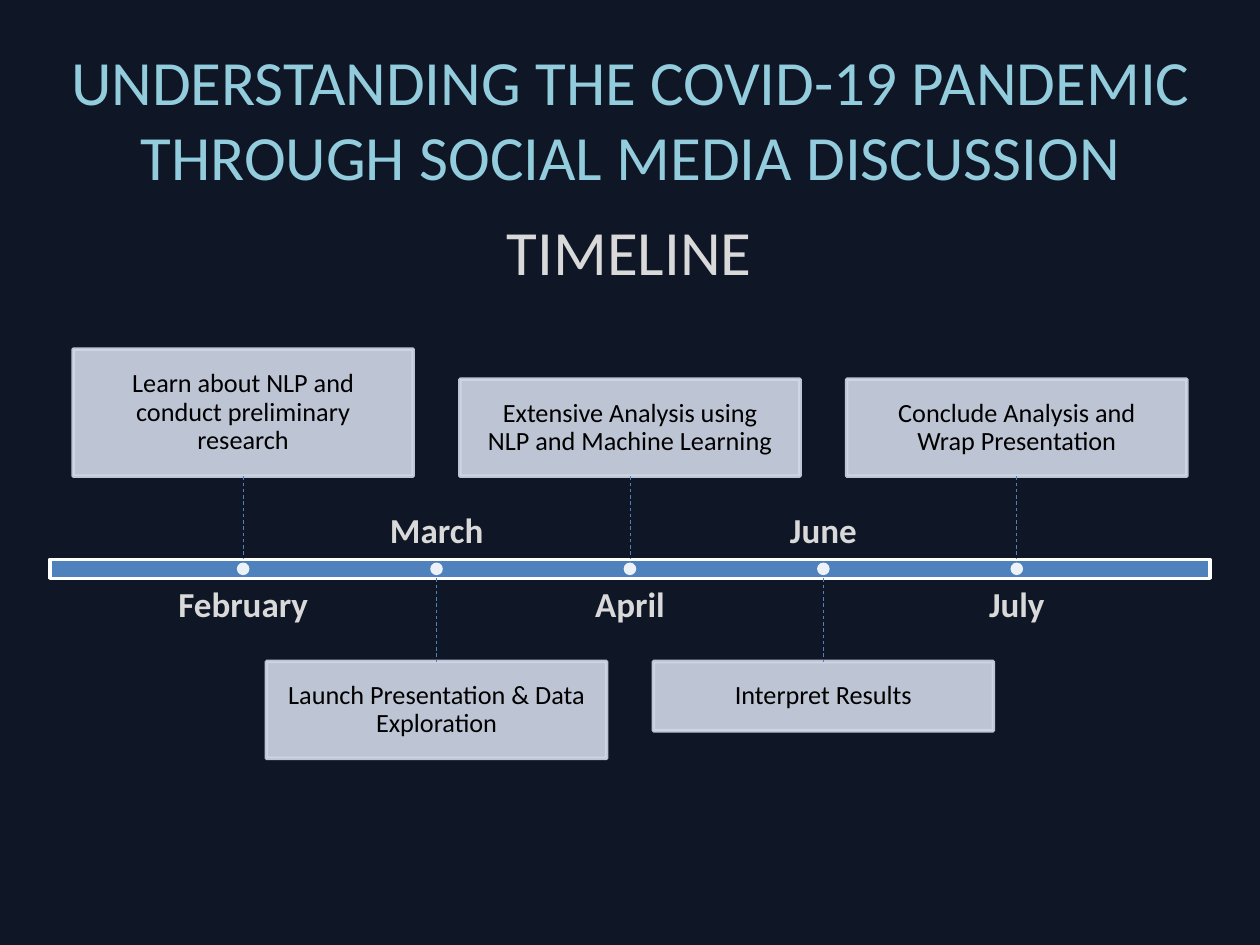
from lxml import etree
from pptx import Presentation
from pptx.dml.color import RGBColor
from pptx.enum import dml, shapes, text
from pptx.oxml.ns import qn
from pptx.util import Inches, Pt

HEADING = "UNDERSTANDING THE COVID-19 PANDEMIC THROUGH SOCIAL MEDIA DISCUSSION"
SUBHEADING = "TIMELINE"
MILESTONES = [
    ("February", "Learn about NLP and conduct preliminary research", 1.01),
    ("March", "Launch Presentation & Data Exploration", 0.77),
    ("April", "Extensive Analysis using NLP and Machine Learning", 0.77),
    ("June", "Interpret Results", 0.55),
    ("July", "Conclude Analysis and Wrap Presentation", 0.77),
]

THEME = {
    "font": "Calibri",
    "background": "0F1625", "heading": "93CDDD", "label": "D9D9D9",
    "accent": "4F81BD", "card": "D0D8E8", "card_text": "000000", "white": "FFFFFF",
    "heading_size": 36, "month_size": 20, "card_size": 15,
}

SLIDE_W, SLIDE_H = 10, 7.5
BAR_W, BAR_H, BAR_TOP = 9.21, 0.15, 4.44
BAR_LEFT = (SLIDE_W - BAR_W) / 2
BAR_BOTTOM = BAR_TOP + BAR_H
STEP = BAR_W / (len(MILESTONES) + 1)
CARD_W, CARD_INSET, STEM = 2.7, 0.16, 0.66
MONTH_W, MONTH_H, MONTH_GAP = 2.45, 0.44, 0.07
DOT = 0.1


def colour(name):
    return RGBColor.from_string(THEME[name])


def inches(*lengths):
    return [Inches(length) for length in lengths]


def make_translucent(fill_parent):
    srgb = fill_parent.find(qn("a:solidFill")).find(qn("a:srgbClr"))
    etree.SubElement(srgb, qn("a:alpha")).set("val", "90000")


def write(box, words, size, ink, anchor, inset=None, bold=False, spacing=None):
    frame = box.text_frame
    frame.word_wrap = True
    frame.auto_size = text.MSO_AUTO_SIZE.NONE
    frame.vertical_anchor = anchor
    if inset is not None:
        frame.margin_left = frame.margin_right = Inches(inset)
        frame.margin_top = frame.margin_bottom = Inches(inset)
    frame.text = words
    paragraph = frame.paragraphs[0]
    paragraph.alignment = text.PP_ALIGN.CENTER
    if spacing:
        paragraph.line_spacing = spacing
    paragraph.font.name = THEME["font"]
    paragraph.font.size = Pt(THEME[size])
    paragraph.font.bold = bold
    paragraph.font.color.rgb = colour(ink)


def add_filled(slide, preset, place, fill, line=None, translucent=False):
    shape = slide.shapes.add_shape(preset, *inches(*place))
    shape.shadow.inherit = False
    shape.fill.solid()
    shape.fill.fore_color.rgb = colour(fill)
    if line:
        shape.line.color.rgb = colour(line)
        shape.line.width = Pt(2)
    else:
        shape.line.fill.background()
    if translucent:
        properties = shape.fill._xPr
        make_translucent(properties)
        if line:
            make_translucent(properties.find(qn("a:ln")))
    return shape


def add_stem(slide, x, top, bottom):
    stem = slide.shapes.add_connector(
        shapes.MSO_CONNECTOR.STRAIGHT, *inches(x, top, x, bottom))
    stem.line.color.rgb = colour("accent")
    stem.line.width = Pt(0.5)
    stem.line.dash_style = dml.MSO_LINE.DASH
    etree.SubElement(stem._element.spPr, qn("a:effectLst"))


def add_milestone(slide, index, month, task, card_h):
    x = BAR_LEFT + STEP * (index + 1)
    above = index % 2 == 0
    if above:
        stem_top, stem_bottom = BAR_TOP - STEM, BAR_TOP
        card_top = stem_top - card_h
        month_top, month_anchor = BAR_BOTTOM + MONTH_GAP, text.MSO_ANCHOR.TOP
    else:
        stem_top, stem_bottom = BAR_BOTTOM, BAR_BOTTOM + STEM
        card_top = stem_bottom
        month_top = BAR_TOP - MONTH_GAP - MONTH_H
        month_anchor = text.MSO_ANCHOR.BOTTOM

    label = slide.shapes.add_textbox(
        *inches(x - MONTH_W / 2, month_top, MONTH_W, MONTH_H))
    write(label, month, "month_size", "label", month_anchor, 0, True, 0.9)
    card = add_filled(slide, shapes.MSO_SHAPE.RECTANGLE,
                      (x - CARD_W / 2, card_top, CARD_W, card_h),
                      "card", "card", translucent=True)
    write(card, task, "card_size", "card_text", text.MSO_ANCHOR.MIDDLE,
          CARD_INSET, spacing=0.9)
    add_stem(slide, x, stem_top, stem_bottom)
    add_filled(slide, shapes.MSO_SHAPE.OVAL,
               (x - DOT / 2, BAR_TOP + (BAR_H - DOT) / 2, DOT, DOT),
               "white", translucent=True)


def main():
    deck = Presentation()
    deck.slide_width, deck.slide_height = inches(SLIDE_W, SLIDE_H)
    slide = deck.slides.add_slide(deck.slide_layouts[5])
    slide.background.fill.solid()
    slide.background.fill.fore_color.rgb = colour("background")

    heading = slide.shapes.title
    heading.left, heading.top, heading.width, heading.height = inches(0.12, 0.31, 9.77, 1.25)
    write(heading, HEADING, "heading_size", "heading", text.MSO_ANCHOR.MIDDLE)
    subheading = slide.shapes.add_textbox(*inches(1.06, 1.64, 7.87, 0.71))
    write(subheading, SUBHEADING, "heading_size", "label", text.MSO_ANCHOR.TOP)

    add_filled(slide, shapes.MSO_SHAPE.RECTANGLE,
               (BAR_LEFT, BAR_TOP, BAR_W, BAR_H), "accent", "white")
    for index, milestone in enumerate(MILESTONES):
        add_milestone(slide, index, *milestone)
    deck.save("out.pptx")


if __name__ == "__main__":
    main()
